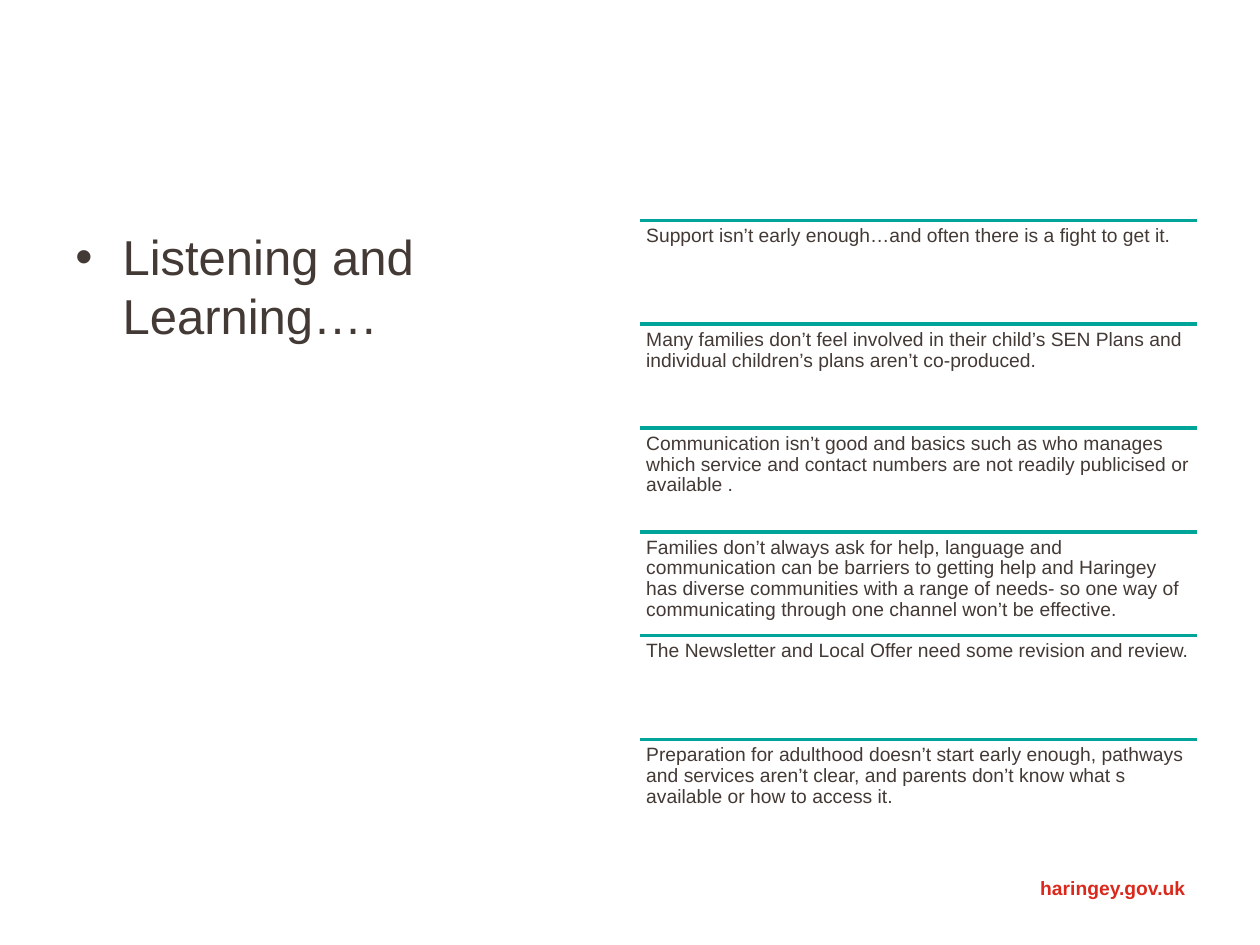
import pptx
import pptx.util
import pptx.dml.color
import pptx.enum.shapes
import pptx.enum.text
import pptx.oxml.ns
import lxml.etree
from dataclasses import dataclass

Pt = pptx.util.Pt
RGB = pptx.dml.color.RGBColor.from_string
Align = pptx.enum.text.PP_ALIGN
qn = pptx.oxml.ns.qn


@dataclass(frozen=True)
class Theme:
    font: str = "Arial"
    ink: str = "433935"
    rule: str = "00A499"
    accent: str = "DA291C"
    heading_size: float = 28
    body_size: float = 11


theme = Theme()


def add_text(shapes, text, left, top, width, height, size=theme.body_size,
             color=theme.ink, bold=False, align=Align.LEFT, inset=(7.2, 3.6),
             line_spacing=1.0, space_after=0, bullet=None, hanging=0):
    frame = shapes.add_textbox(Pt(left), Pt(top), Pt(width), Pt(height)).text_frame
    frame.word_wrap = True
    frame.margin_left = frame.margin_right = Pt(inset[0])
    frame.margin_top = frame.margin_bottom = Pt(inset[1])
    paragraph = frame.paragraphs[0]
    paragraph.text = text
    paragraph.alignment = align
    paragraph.line_spacing = line_spacing
    paragraph.space_after = Pt(space_after)
    if bullet:
        properties = paragraph._p.get_or_add_pPr()
        properties.set("marL", str(Pt(hanging)))
        properties.set("indent", str(-Pt(hanging)))
        lxml.etree.SubElement(properties, qn("a:buFont")).set("typeface", theme.font)
        lxml.etree.SubElement(properties, qn("a:buChar")).set("char", bullet)
    font = paragraph.runs[0].font
    font.name = theme.font
    font.size = Pt(size)
    font.bold = bold
    font.color.rgb = RGB(color)


deck = pptx.Presentation()
deck.slide_width, deck.slide_height = Pt(720), Pt(540)
slide = deck.slides.add_slide(deck.slide_layouts[6])

content_top, column_width = 126, 318
findings_left, finding_pitch = 366, 59.3

add_text(slide.shapes, "Listening and Learning….", 36, content_top, column_width, 356.4,
         size=theme.heading_size, bullet="•", hanging=27)
add_text(slide.shapes, "haringey.gov.uk", 456.5, 497, 228, 28.8,
         color=theme.accent, bold=True, align=Align.RIGHT, space_after=6)

findings = [
    "Support isn’t early enough…and often there is a fight to get it.",
    "Many families don’t feel involved in their child’s SEN Plans and individual children’s plans aren’t co-produced.",
    "Communication isn’t good and basics such as who manages which service and contact numbers are not readily publicised or available .",
    "Families don’t always ask for help, language and communication can be barriers to getting help and Haringey has diverse communities with a range of needs- so one way of communicating through one channel won’t be effective.",
    "The Newsletter and Local Offer need some revision and review.",
    "Preparation for adulthood doesn’t start early enough, pathways and services aren’t clear, and parents don’t know what s available or how to access it.",
]

findings_group = slide.shapes.add_group_shape()
for index, finding in enumerate(findings):
    top = content_top + index * finding_pitch
    rule = findings_group.shapes.add_connector(
        pptx.enum.shapes.MSO_CONNECTOR.STRAIGHT,
        Pt(findings_left), Pt(top), Pt(findings_left + column_width), Pt(top))
    rule.line.color.rgb = RGB(theme.rule)
    rule.line.width = Pt(2)
    lxml.etree.SubElement(rule._element.spPr, qn("a:effectLst"))
    add_text(findings_group.shapes, finding, findings_left, top, column_width, finding_pitch,
             inset=(3.3, 3.3), line_spacing=0.9, space_after=3.85)

deck.save("out.pptx")
